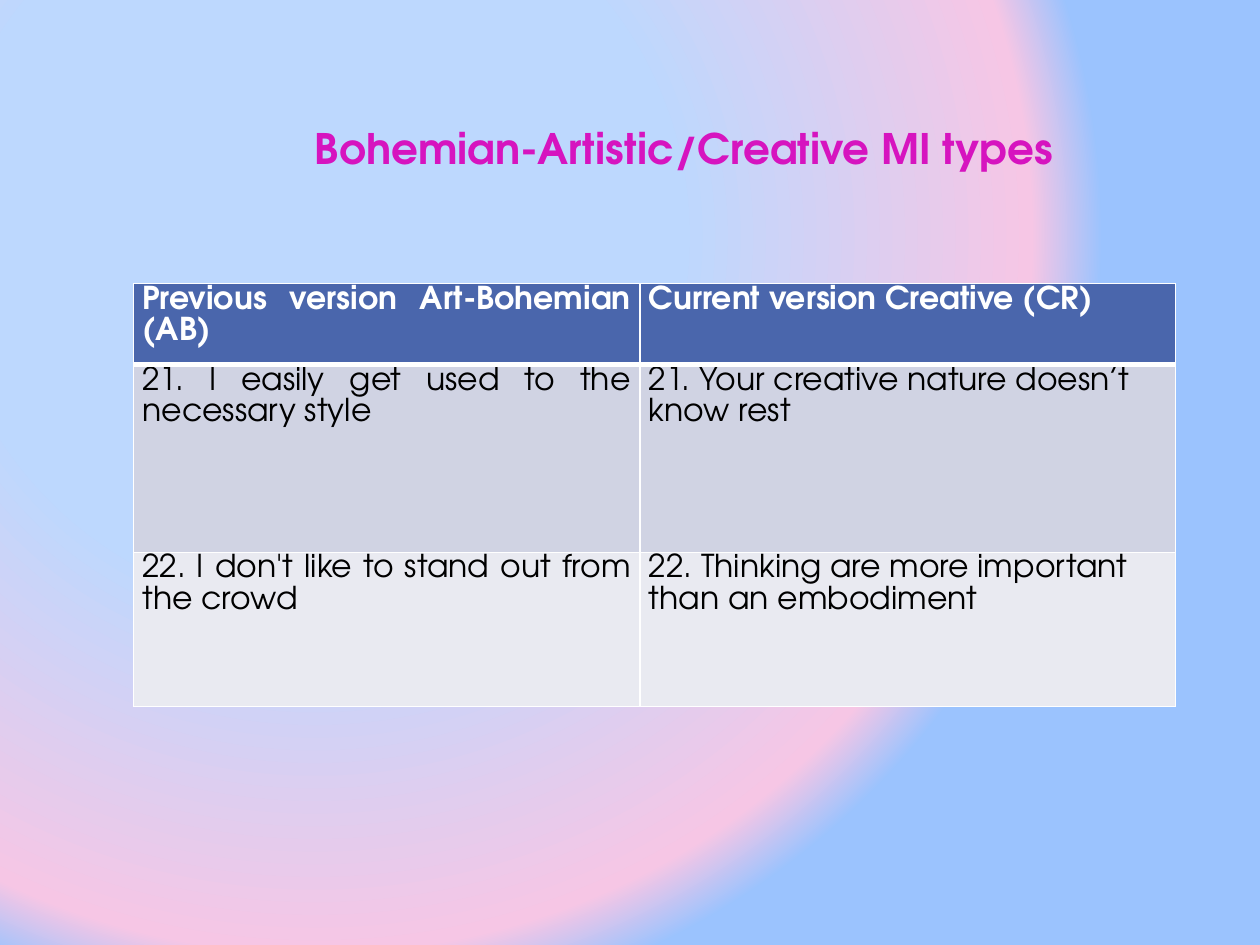
from pptx import Presentation
from pptx.dml.color import RGBColor
from pptx.enum.text import MSO_AUTO_SIZE as AutoSize, PP_ALIGN as Align
from pptx.oxml import parse_xml
from pptx.oxml.ns import nsdecls
from pptx.util import Cm, Pt

FONT = "TeX Gyre Adventor"
MAGENTA = RGBColor(0xD6, 0x14, 0xBF)
WHITE = RGBColor(0xFF, 0xFF, 0xFF)
BLACK = RGBColor(0, 0, 0)
HEADER_BLUE = RGBColor(0x4A, 0x66, 0xAC)
BAND_DARK = RGBColor(0xD0, 0xD3, 0xE3)
BAND_LIGHT = RGBColor(0xE9, 0xEA, 0xF1)
PALE_BLUE = RGBColor(0xBD, 0xD8, 0xFE)
PINK = RGBColor(0xF6, 0xC6, 0xE5)
SKY_BLUE = RGBColor(0x9B, 0xC3, 0xFE)

TITLE = "Bohemian-Artistic/Creative MI types"
ROWS = [
    ("Previous version Art-Bohemian (AB)", "Current version Creative (CR)"),
    ("21. I easily get used to the necessary style",
     "21. Your creative nature doesn’t know rest"),
    ("22. I don't like to stand out from the crowd",
     "22. Thinking are more important than an embodiment"),
]
ROW_FILLS = [HEADER_BLUE, BAND_DARK, BAND_LIGHT]
ROW_SHARES = [0.19, 0.445, 0.365]
COL_SHARES = [0.486, 0.514]


def add_run(p, text, size, color, bold):
    r = p.add_run()
    r.text = text
    r.font.name = FONT
    r.font.size = Pt(size)
    r.font.bold = bold
    r.font.color.rgb = color


def paint_background(s):
    """Circular gradient centred in the upper left quarter."""
    s.background.fill.gradient()
    grad = s.element.xpath(".//p:bg//a:gradFill")[0]
    stops = "".join(
        f'<a:gs pos="{pos * 1000}"><a:srgbClr val="{color}"/></a:gs>'
        for pos, color in ((46, PALE_BLUE), (91, PINK), (100, SKY_BLUE)))
    grad.getparent().replace(grad, parse_xml(
        f'<a:gradFill {nsdecls("a")} rotWithShape="1"><a:gsLst>{stops}</a:gsLst>'
        '<a:path path="circle"><a:fillToRect l="50000" t="50000" r="100000" '
        'b="100000"/></a:path></a:gradFill>'))


def add_title(s, left, top, width, height):
    tf = s.shapes.add_textbox(left, top, width, height).text_frame
    tf.word_wrap = True
    tf.auto_size = AutoSize.SHAPE_TO_FIT_TEXT
    add_run(tf.paragraphs[0], TITLE, 24, MAGENTA, True)


def set_borders(cell, widths):
    """Draw white borders; widths holds points for each side."""
    tc_pr = cell._tc.get_or_add_tcPr()
    for i, (side, width) in enumerate(widths.items()):
        tc_pr.insert(i, parse_xml(
            f'<a:ln{side} {nsdecls("a")} w="{Pt(width)}"><a:solidFill>'
            f'<a:srgbClr val="{WHITE}"/></a:solidFill></a:ln{side}>'))


def add_comparison_table(s, left, top, width, height):
    table = s.shapes.add_table(len(ROWS), len(COL_SHARES),
                               left, top, width, height).table
    for col, share in zip(table.columns, COL_SHARES):
        col.width = int(width * share)
    for row, share in zip(table.rows, ROW_SHARES):
        row.height = int(height * share)

    for i, texts in enumerate(ROWS):
        header = i == 0
        for j, text in enumerate(texts):
            cell = table.cell(i, j)
            cell.margin_left = cell.margin_right = Cm(0.18)
            cell.margin_top = cell.margin_bottom = 0
            cell.fill.solid()
            cell.fill.fore_color.rgb = ROW_FILLS[i]
            # A thick rule separates the header from the body
            set_borders(cell, {"L": 1, "R": 1, "T": 3 if i == 1 else 1,
                               "B": 3 if header else 1})
            p = cell.text_frame.paragraphs[0]
            p.alignment = Align.JUSTIFY if header or j == 0 else Align.LEFT
            p.line_spacing = 1.07
            add_run(p, text, 18, WHITE if header else BLACK, header)


def main():
    prs = Presentation()
    prs.slide_width, prs.slide_height = Cm(25.4), Cm(19.05)
    s = prs.slides.add_slide(prs.slide_layouts[6])
    paint_background(s)
    add_title(s, Cm(6.1), Cm(2.34), Cm(16.79), Cm(1.27))
    add_comparison_table(s, Cm(2.69), Cm(5.72), Cm(21.01), Cm(8.51))
    prs.save("out.pptx")


if __name__ == "__main__":
    main()
